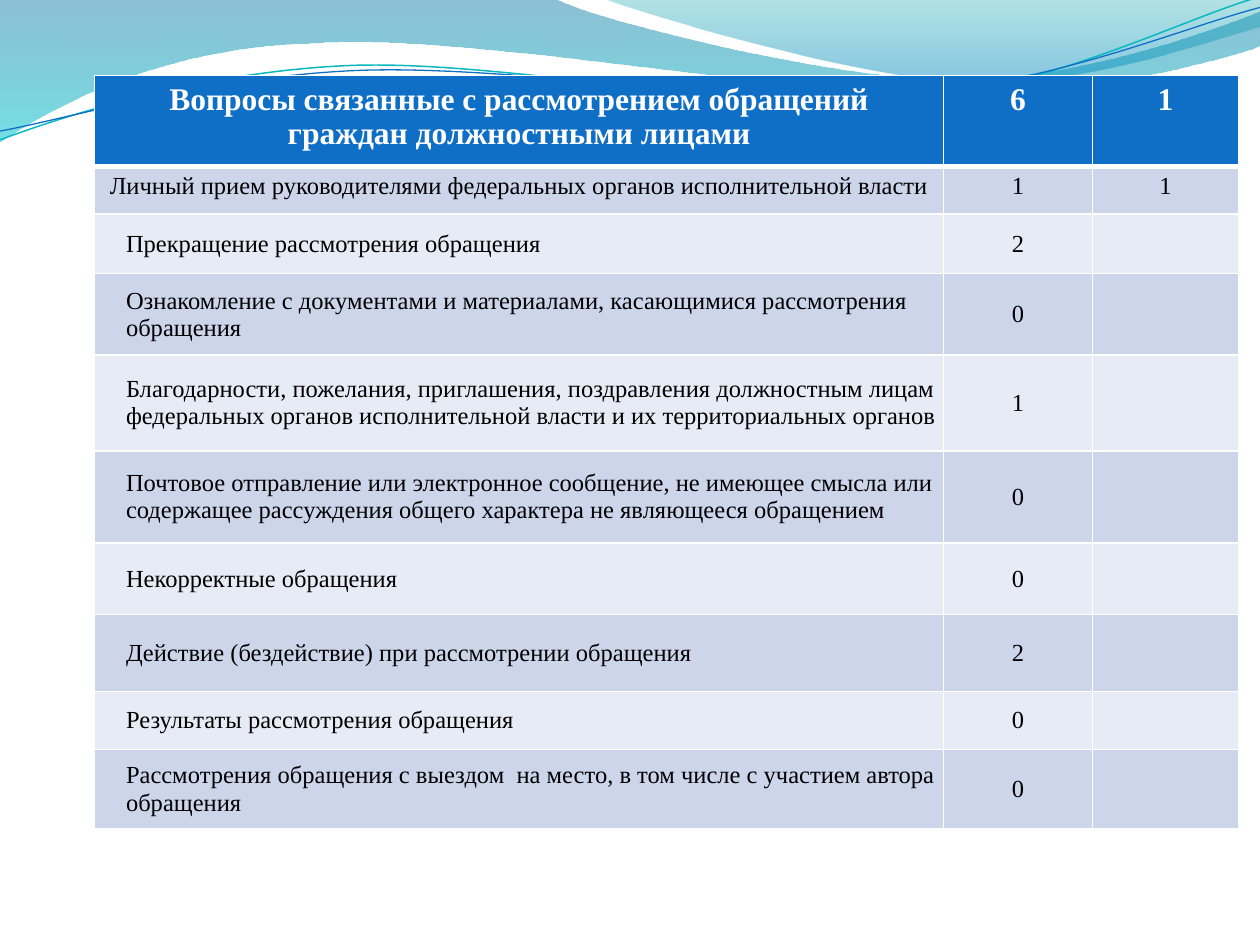
import math

from lxml import etree
from pptx import Presentation
from pptx import util as u
from pptx.dml.color import RGBColor
from pptx.enum import text
from pptx.oxml import ns

THEME = {
    "font": "Times New Roman", "header_size": 18, "body_size": 14,
    "header_fill": "0F6FC6", "bands": ("CCD5EA", "E7EBF5"),
    "header_ink": "FFFFFF", "ink": "000000", "grid": "FFFFFF",
    "wave_teal": "0AB8BF", "wave_blue": "0F6FC6",
    # gradient stops: colour, opacity in percent, position
    "left_ribbon": (("0074A1", 45, 0), ("00C6CF", 55, 1)),
    "right_ribbon": (("00A1A9", 30, 0), ("008BBF", 45, 0.8)),
}

# Outlines: start point, then straight (2 numbers) or curved (6 numbers) steps
LEFT_RIBBON = [
    (0, 0), (4.4, -0.01), (4.76, 0.17, 6.64, 0.63, 7.58, 0.63),
    (8.53, 0.63, 9.58, 0.26, 10, 0.09), (10.01, 0.36),
    (9.83, 0.44, 8.7, 0.76, 7.46, 0.75), (6.22, 0.75, 3.82, 0.28, 2.57, 0.34),
    (1.29, 0.36, 0.46, 0.83, -0.01, 1.13), (0, 0)]
RIGHT_RIBBON = [
    (4.79, -0.01), (5.09, 0.11, 6.82, 0.62, 7.69, 0.65),
    (8.56, 0.69, 9.61, 0.32, 10, 0.21), (10, 0), (4.79, -0.01)]
TEAL_WAVE = [
    (0, 1.11), (0.48, 0.93, 1.58, 0.57, 2.77, 0.52),
    (3.95, 0.47, 5.93, 0.89, 7.13, 0.8), (8.33, 0.71, 9.38, 0.15, 9.98, -0.02)]
BLUE_WAVE = [
    (0, 1.04), (0.47, 0.96, 1.64, 0.61, 2.83, 0.56),
    (4.03, 0.51, 5.97, 0.84, 7.17, 0.75), (8.36, 0.67, 9.41, 0.21, 10, 0.06)]
WAVE_TILT = -2.7

COLUMNS = (6.74, 1.18, 1.16)
ROW_HEIGHTS = (0.72, 0.38, 0.47, 0.65, 0.76, 0.73, 0.57, 0.61, 0.46, 0.63)
QUESTIONS = [
    ("Вопросы связанные с рассмотрением обращений граждан должностными лицами", "6", "1"),
    ("Личный прием руководителями федеральных органов исполнительной власти", "1", "1"),
    ("Прекращение рассмотрения обращения", "2", ""),
    ("Ознакомление с документами и материалами, касающимися рассмотрения обращения", "0", ""),
    ("Благодарности, пожелания, приглашения, поздравления должностным лицам "
     "федеральных органов исполнительной власти и их территориальных органов", "1", ""),
    ("Почтовое отправление или электронное сообщение, не имеющее смысла или "
     "содержащее рассуждения общего характера не являющееся обращением", "0", ""),
    ("Некорректные обращения", "0", ""),
    ("Действие (бездействие) при рассмотрении обращения", "2", ""),
    ("Результаты рассмотрения обращения", "0", ""),
    ("Рассмотрения обращения с выездом  на место, в том числе с участием автора обращения",
     "0", ""),
]


def rgb(value):
    return RGBColor.from_string(value)


def turn(outline, degrees, center):
    """Turn every point of an outline clockwise about a center."""
    cos, sin = math.cos(math.radians(degrees)), math.sin(math.radians(degrees))
    turned = []
    for step in outline:
        numbers = []
        for x, y in zip(step[::2], step[1::2]):
            dx, dy = x - center[0], y - center[1]
            numbers += [center[0] + dx * cos - dy * sin, center[1] + dx * sin + dy * cos]
        turned.append(tuple(numbers))
    return turned


def add_outline(slide, outline, close):
    """Draw through all points, then join each curved step into one Bezier."""
    points = [(u.Inches(x), u.Inches(y))
              for step in outline for x, y in zip(step[::2], step[1::2])]
    builder = slide.shapes.build_freeform(*points[0])
    builder.add_line_segments(points[1:], close=close)
    shape = builder.convert_to_shape()
    shape.shadow.inherit = False
    lines = iter(shape.element.spPr.findall(".//" + ns.qn("a:lnTo")))
    for step in outline[1:]:
        first = next(lines)
        if len(step) == 6:
            curve = etree.Element(ns.qn("a:cubicBezTo"))
            first.addprevious(curve)
            for line in (first, next(lines), next(lines)):
                curve.append(line[0])
                line.getparent().remove(line)
    return shape


def add_ribbon(slide, outline, stops):
    ribbon = add_outline(slide, outline, True)
    ribbon.line.fill.background()
    ribbon.fill.gradient()
    ribbon.fill.gradient_angle = 270
    for stop, (color, _, position) in zip(ribbon.fill.gradient_stops, stops):
        stop.color.rgb = rgb(color)
        stop.position = position
    colors = ribbon.element.spPr.findall(".//" + ns.qn("a:srgbClr"))
    for color, (_, opacity, _) in zip(colors, stops):
        etree.SubElement(color, ns.qn("a:alpha"), val=str(opacity * 1000))


def add_wave(slide, outline, center, color, width):
    wave = add_outline(slide, turn(outline, -WAVE_TILT, center), False)
    wave.rotation = WAVE_TILT
    wave.fill.background()
    wave.line.color.rgb = rgb(color)
    wave.line.width = u.Pt(width)


def set_borders(cell, top, bottom):
    properties = cell._tc.get_or_add_tcPr()
    for side, width in (("L", 1), ("R", 1), ("T", top), ("B", bottom)):
        line = etree.SubElement(properties, ns.qn("a:ln" + side), w=str(u.Pt(width)))
        fill = etree.SubElement(line, ns.qn("a:solidFill"))
        etree.SubElement(fill, ns.qn("a:srgbClr"), val=THEME["grid"])


def fill_cell(cell, content, row, column):
    header = row == 0
    set_borders(cell, top=3 if row == 1 else 1, bottom=3 if header else 1)
    cell.fill.solid()
    cell.fill.fore_color.rgb = rgb(
        THEME["header_fill"] if header else THEME["bands"][(row - 1) % 2])
    if not content:
        return
    # Detail rows are centred vertically, with indented wording
    detail = row > 1
    if detail:
        cell.vertical_anchor = text.MSO_ANCHOR.MIDDLE
        cell.margin_left = u.Inches(0.25 if column == 0 else 0.04)
        cell.margin_right = cell.margin_top = cell.margin_bottom = u.Inches(0.04)
    cell.text = content
    paragraph = cell.text_frame.paragraphs[0]
    paragraph.alignment = (text.PP_ALIGN.LEFT if detail and column == 0
                           else text.PP_ALIGN.CENTER)
    font = paragraph.font
    font.name = THEME["font"]
    font.size = u.Pt(THEME["header_size" if header else "body_size"])
    font.bold = header
    font.color.rgb = rgb(THEME["header_ink" if header else "ink"])


def add_questions(slide, left, top):
    table = slide.shapes.add_table(
        len(QUESTIONS), len(COLUMNS), left, top,
        u.Inches(sum(COLUMNS)), u.Inches(sum(ROW_HEIGHTS))).table
    for column, width in zip(table.columns, COLUMNS):
        column.width = u.Inches(width)
    for row, height in zip(table.rows, ROW_HEIGHTS):
        row.height = u.Inches(height)
    for r, question in enumerate(QUESTIONS):
        for c, content in enumerate(question):
            fill_cell(table.cell(r, c), content, r, c)


def main():
    deck = Presentation()
    deck.slide_width, deck.slide_height = u.Inches(10), u.Inches(7.5)
    slide = deck.slides.add_slide(deck.slide_layouts[6])

    # Wavy band along the top
    add_ribbon(slide, LEFT_RIBBON, THEME["left_ribbon"])
    add_ribbon(slide, RIGHT_RIBBON, THEME["right_ribbon"])
    add_wave(slide, TEAL_WAVE, (4.99, 0.58), THEME["wave_teal"], 0.85)
    add_wave(slide, BLUE_WAVE, (5, 0.59), THEME["wave_blue"], 0.75)

    # Table of questions
    add_questions(slide, int(deck.slide_width * 0.075), int(deck.slide_height * 0.08))
    deck.save("out.pptx")


if __name__ == "__main__":
    main()
